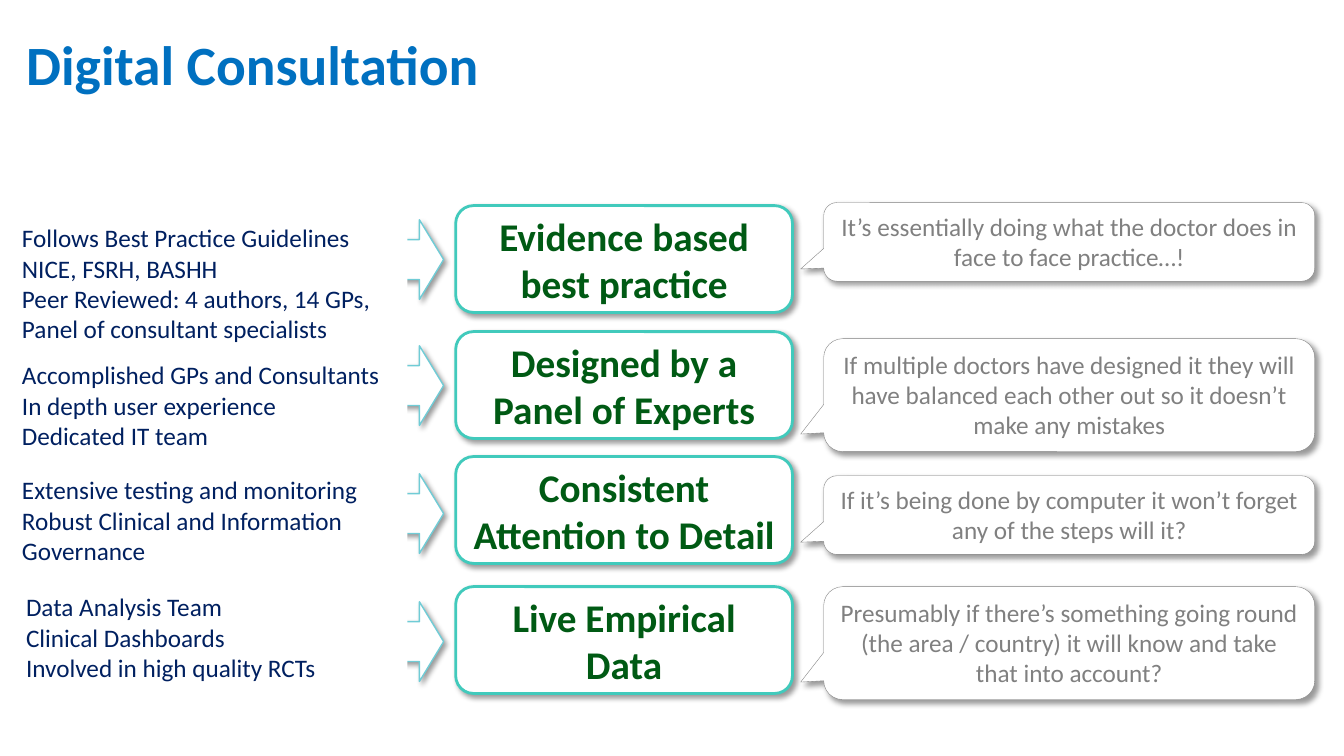
"""Build the Digital Consultation slide."""
from dataclasses import dataclass

from lxml import etree
from pptx import Presentation
from pptx import util as u
from pptx.dml.color import RGBColor
from pptx.enum import shapes, text
from pptx.oxml import ns

FONT = "Calibri"
TITLE_BLUE = RGBColor(0x00, 0x70, 0xC0)
NAVY = RGBColor(0x00, 0x20, 0x60)
GREEN = RGBColor(0x00, 0x5A, 0x14)
TEAL = RGBColor(0x41, 0xCA, 0xBC)
AQUA = RGBColor(0x70, 0xCC, 0xD6)
GREY = RGBColor(0x80, 0x80, 0x80)
WHITE = RGBColor(0xFF, 0xFF, 0xFF)
SHAPE = shapes.MSO_SHAPE
ALIGN = text.PP_ALIGN
ANCHOR = text.MSO_ANCHOR
AUTO = text.MSO_AUTO_SIZE


@dataclass
class Row:
    """One principle with its supporting facts and patient comment."""
    heading: str
    heading_top: float
    arrow_top: float
    facts: list[str]
    facts_box: tuple[float, float, float]
    comment: str
    comment_top: float
    comment_height: float


ROWS = [
    Row("Evidence based best practice", 2.04, 2.18,
        ["Follows Best Practice Guidelines", "NICE, FSRH, BASHH",
         "Peer Reviewed: 4 authors, 14 GPs, Panel of consultant specialists"],
        (0.12, 2.16, 1.31),
        "It’s essentially doing what the doctor does in face to face practice…!",
        2.01, 0.78),
    Row("Designed by a Panel of Experts", 3.29, 3.43,
        ["Accomplished GPs and Consultants", "In depth user experience",
         "Dedicated IT team"],
        (0.12, 3.52, 1.01),
        "If multiple doctors have designed it they will have balanced "
        "each other out so it doesn’t make any mistakes",
        3.36, 1.12),
    Row("Consistent Attention to Detail", 4.53, 4.7,
        ["Extensive testing and monitoring",
         "Robust Clinical and Information Governance"],
        (0.12, 4.66, 1.01),
        "If it’s being done by computer it won’t forget any of the steps will it?",
        4.72, 0.78),
    Row("Live Empirical Data", 5.82, 5.97,
        ["Data Analysis Team", "Clinical Dashboards",
         "Involved in high quality RCTs"],
        (0.16, 5.82, 1.01),
        "Presumably if there’s something going round (the area / country) "
        "it will know and take that into account?",
        5.82, 1.12),
]


def write(sp, lines: list[str], *, size: float, color: RGBColor,
          bold: bool = False, align=ALIGN.LEFT, anchor=ANCHOR.TOP,
          auto_size=AUTO.NONE, spacing: float = 1.0) -> None:
    """Fill a shape with one formatted paragraph per line."""
    tf = sp.text_frame
    tf.word_wrap = True
    tf.auto_size = auto_size
    tf.vertical_anchor = anchor
    for i, line in enumerate(lines):
        p = tf.add_paragraph() if i else tf.paragraphs[0]
        p.alignment = align
        p.line_spacing = spacing
        r = p.add_run()
        r.text = line
        r.font.name = FONT
        r.font.size = u.Pt(size)
        r.font.bold = bold
        r.font.color.rgb = color


def add_shadow(sp) -> None:
    """Give a shape a soft shadow towards the lower right."""
    effects = sp._element.spPr.find(ns.qn("a:effectLst"))
    shadow = etree.SubElement(
        effects, ns.qn("a:outerShdw"), blurRad=str(u.Pt(4)),
        dist=str(u.Pt(3)), dir="2700000", algn="tl", rotWithShape="0")
    color = etree.SubElement(shadow, ns.qn("a:srgbClr"), val="000000")
    etree.SubElement(color, ns.qn("a:alpha"), val="40000")


def add_box(slide, kind, left: float, top: float, width: float, height: float,
            line: RGBColor | None = None, weight: float = 1):
    """Add a white shape; an outlined one also casts a shadow."""
    sp = slide.shapes.add_shape(kind, u.Inches(left), u.Inches(top),
                                u.Inches(width), u.Inches(height))
    sp.shadow.inherit = False
    sp.fill.solid()
    sp.fill.fore_color.rgb = WHITE
    if line is None:
        sp.line.fill.background()
    else:
        sp.line.color.rgb = line
        sp.line.width = u.Pt(weight)
        add_shadow(sp)
    return sp


def add_row(slide, row: Row) -> None:
    """Draw the facts, arrow, heading and comment of one row."""
    add_box(slide, SHAPE.RIGHT_ARROW, 3.92, row.arrow_top, 0.48, 0.79, AQUA)
    add_box(slide, SHAPE.RECTANGLE, 3.74, row.arrow_top + 0.06, 0.3, 0.73)

    sp = add_box(slide, SHAPE.ROUNDED_RECTANGLE, 4.52, row.heading_top,
                 3.34, 1.06, TEAL, 2)
    write(sp, [row.heading], size=28, color=GREEN, bold=True,
          align=ALIGN.CENTER, anchor=ANCHOR.MIDDLE)

    sp = add_box(slide, SHAPE.ROUNDED_RECTANGULAR_CALLOUT, 8.17,
                 row.comment_top, 4.87, row.comment_height, GREY, 0.25)
    for i, value in enumerate((-0.547, 0.345, 0.167)):
        sp.adjustments[i] = value
    write(sp, [row.comment], size=18, color=GREY, align=ALIGN.CENTER,
          auto_size=AUTO.SHAPE_TO_FIT_TEXT)

    left, top, height = row.facts_box
    sp = slide.shapes.add_textbox(u.Inches(left), u.Inches(top),
                                  u.Inches(3.76), u.Inches(height))
    write(sp, row.facts, size=18, color=NAVY,
          auto_size=AUTO.SHAPE_TO_FIT_TEXT)


def main() -> None:
    """Create the presentation and save it."""
    prs = Presentation()
    prs.slide_width = u.Inches(13.33)
    prs.slide_height = u.Inches(7.5)
    slide = prs.slides.add_slide(prs.slide_layouts[5])
    title = slide.shapes.title
    title.left, title.top = u.Inches(0.16), u.Inches(0.3)
    title.width, title.height = u.Inches(11.5), u.Inches(0.74)
    write(title, ["Digital Consultation"], size=39.6, color=TITLE_BLUE,
          bold=True, anchor=ANCHOR.MIDDLE, spacing=0.9)
    for row in ROWS:
        add_row(slide, row)
    prs.save("out.pptx")


if __name__ == "__main__":
    main()
